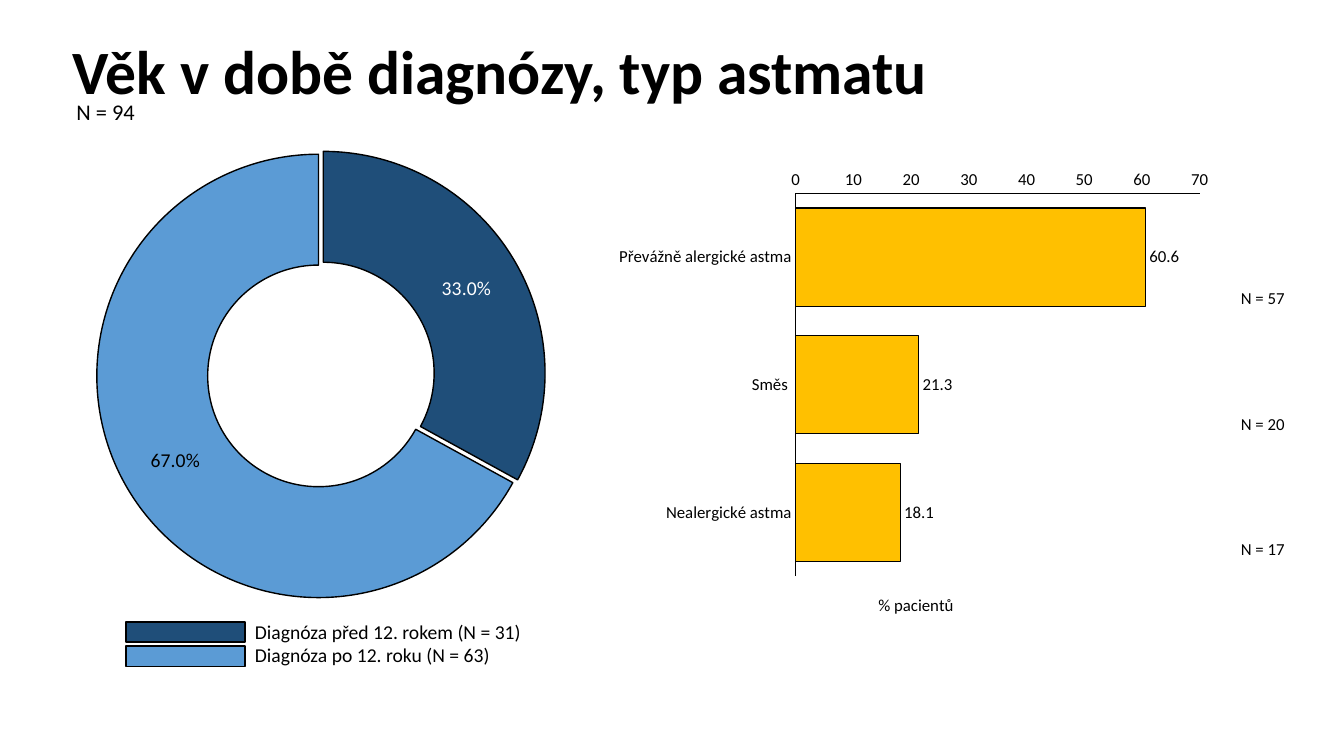
from lxml import etree
from pptx import Presentation
from pptx import util as u
from pptx.chart.data import CategoryChartData
from pptx.dml.color import RGBColor
from pptx.enum import chart as charts, shapes, text
from pptx.oxml import ns

THEME = {
    "font": "Calibri",
    "black": RGBColor.from_string("000000"),
    "white": RGBColor.from_string("FFFFFF"),
    "early": RGBColor.from_string("1F4E79"),
    "late": RGBColor.from_string("5B9BD5"),
    "bar": RGBColor.from_string("FFC000"),
    "title": 44, "count": 16, "legend": 14, "small": 12,
    "outline": u.Pt(1),
}

deck = Presentation()
deck.slide_width, deck.slide_height = u.Inches(13.33), u.Inches(7.5)
page = deck.slides.add_slide(deck.slide_layouts[6])


def area(left, top, width, height):
    """Turn percentages of the slide into lengths."""
    return [int(share * side / 100) for share, side in zip(
        (left, top, width, height), (deck.slide_width, deck.slide_height) * 2)]


def style(font, size, color="black", bold=False):
    values = {"name": THEME["font"], "size": u.Pt(THEME[size]), "bold": bold}
    for name, value in values.items():
        setattr(font, name, value)
    font.color.rgb = THEME[color]


# Heading, patient count and legend wording
boxes = [
    (area(4.65, 2.67, 90.7, 13.07), ["Věk v době diagnózy, typ astmatu"], "title", True),
    (area(4.95, 12, 7.5, 5.6), ["N = 94"], "count", False),
    (area(18.23, 80, 23.18, 10.13),
     ["Diagnóza před 12. rokem (N = 31)", "Diagnóza po 12. roku (N = 63)"], "legend", False),
]
for place, lines, size, bold in boxes:
    box = page.shapes.add_textbox(*place)
    frame = box.text_frame
    frame.word_wrap = True
    frame.vertical_anchor = text.MSO_ANCHOR.MIDDLE
    for index, line in enumerate(lines):
        para = frame.add_paragraph() if index else frame.paragraphs[0]
        span = para.add_run()
        span.text = line
        style(span.font, size, bold=bold)

# Legend swatches
for row, color in enumerate(("early", "late")):
    swatch = page.shapes.add_shape(
        shapes.MSO_SHAPE.RECTANGLE, *area(9.38, 82.27 + 3.2 * row, 8.85, 2.67))
    swatch.shadow.inherit = False
    swatch.fill.solid()
    swatch.fill.fore_color.rgb = THEME[color]
    swatch.line.color.rgb = THEME["black"]
    swatch.line.width = THEME["outline"]

# Doughnut: age at diagnosis
ages = CategoryChartData()
ages.categories = ["1", "2"]
ages.add_series("Series 1", (33, 67))
doughnut = page.shapes.add_chart(
    charts.XL_CHART_TYPE.DOUGHNUT, *area(4.88, 18.53, 38.03, 62.4), ages).chart
age_series = doughnut.plots[0].series[0]
labels = age_series.data_labels
for name, value in {"show_value": False, "show_percentage": True,
                    "number_format": "0.0%", "number_format_is_linked": False}.items():
    setattr(labels, name, value)
style(labels.font, "legend")
for index, color in enumerate(("early", "late")):
    slice_format = age_series.points[index].format
    slice_format.fill.solid()
    slice_format.fill.fore_color.rgb = THEME[color]
    slice_format.line.color.rgb = THEME["black"]
    slice_format.line.width = THEME["outline"]

# The first slice is pulled out and has a white percentage
style(age_series.points[0].data_label.font, "legend", "white")
first_label = labels._element.find(ns.qn("c:dLbl"))
first_label.find(ns.qn("c:showVal")).set("val", "0")
first_label.find(ns.qn("c:showPercent")).set("val", "1")
first_label.insert(1, etree.Element(ns.qn("c:numFmt"), formatCode="0.0%", sourceLinked="0"))
first_slice = age_series._element.find(ns.qn("c:dPt"))
first_slice.find(ns.qn("c:spPr")).addprevious(
    etree.Element(ns.qn("c:explosion"), val="5"))

# Bars: type of asthma
types = CategoryChartData(number_format="0.0")
types.categories = ["Převážně alergické astma", "Směs ", "Nealergické astma"]
types.add_series("Series 1", (60.6, 21.3, 18.1))
bars = page.shapes.add_chart(
    charts.XL_CHART_TYPE.BAR_CLUSTERED, *area(45.09, 21.2, 45.54, 62.53), types).chart
plot = bars.plots[0]
plot.gap_width = 30
plot.vary_by_categories = False
bar_format = plot.series[0].format
bar_format.fill.solid()
bar_format.fill.fore_color.rgb = THEME["bar"]
bar_format.line.color.rgb = THEME["black"]
bar_format.line.width = THEME["outline"]
plot.has_data_labels = True
for name, value in {"show_value": True, "number_format": "#,##0.0",
                    "number_format_is_linked": False,
                    "position": charts.XL_LABEL_POSITION.OUTSIDE_END}.items():
    setattr(plot.data_labels, name, value)
style(plot.data_labels.font, "small")

# Axes
for axis in (bars.category_axis, bars.value_axis):
    axis.has_major_gridlines = False
    axis.major_tick_mark = axis.minor_tick_mark = charts.XL_TICK_MARK.NONE
    axis.format.line.color.rgb = THEME["black"]
    axis.format.line.width = THEME["outline"]
    style(axis.tick_labels.font, "small")
bars.category_axis.reverse_order = True
percent_axis = bars.value_axis
percent_axis.minimum_scale, percent_axis.maximum_scale, percent_axis.major_unit = 0, 70, 10
percent_axis.tick_labels.number_format = "#,##0"
percent_axis.tick_labels.number_format_is_linked = False
span = percent_axis.axis_title.text_frame.paragraphs[0].add_run()
span.text = "% pacientů"
style(span.font, "small")

# Positions inside the charts, as shares of each chart
for chart in (doughnut, bars):
    chart.has_legend = False
    chart.has_title = False
    style(chart.font, "small")
inner = [
    (doughnut._chartSpace.chart.plotArea, 0, {"x": 0.06, "y": 0.03, "w": 0.87, "h": 0.94}),
    (bars._chartSpace.chart.plotArea, 0, {"x": 0.31, "y": 0.07, "w": 0.66, "h": 0.81}),
    (percent_axis.axis_title._element, 1, {"x": 0.44, "y": 0.91}),
]
for parent, position, shares in inner:
    for old in parent.findall(ns.qn("c:layout")):
        parent.remove(old)
    layout = etree.Element(ns.qn("c:layout"))
    manual = etree.SubElement(layout, ns.qn("c:manualLayout"))
    if "w" in shares:
        etree.SubElement(manual, ns.qn("c:layoutTarget"), val="inner")
    for side in "xy":
        etree.SubElement(manual, ns.qn(f"c:{side}Mode"), val="edge")
    for side, share in shares.items():
        etree.SubElement(manual, ns.qn(f"c:{side}"), val=str(share))
    parent.insert(position, layout)

# Patient counts beside the bars
table = page.shapes.add_table(3, 1, *area(90.62, 31.2, 6.68, 49.73)).table
table.first_row = table.horz_banding = False
for row, count in enumerate((57, 20, 17)):
    cell = table.cell(row, 0)
    cell.fill.solid()
    cell.fill.fore_color.rgb = THEME["white"]
    for name, value in {"margin_left": u.Inches(0.01), "margin_right": u.Inches(0.01),
                        "margin_top": u.Inches(0.01), "margin_bottom": 0,
                        "vertical_anchor": text.MSO_ANCHOR.MIDDLE}.items():
        setattr(cell, name, value)
    para = cell.text_frame.paragraphs[0]
    para.alignment = text.PP_ALIGN.CENTER
    span = para.add_run()
    span.text = f"N = {count}"
    style(span.font, "small")

deck.save("out.pptx")
